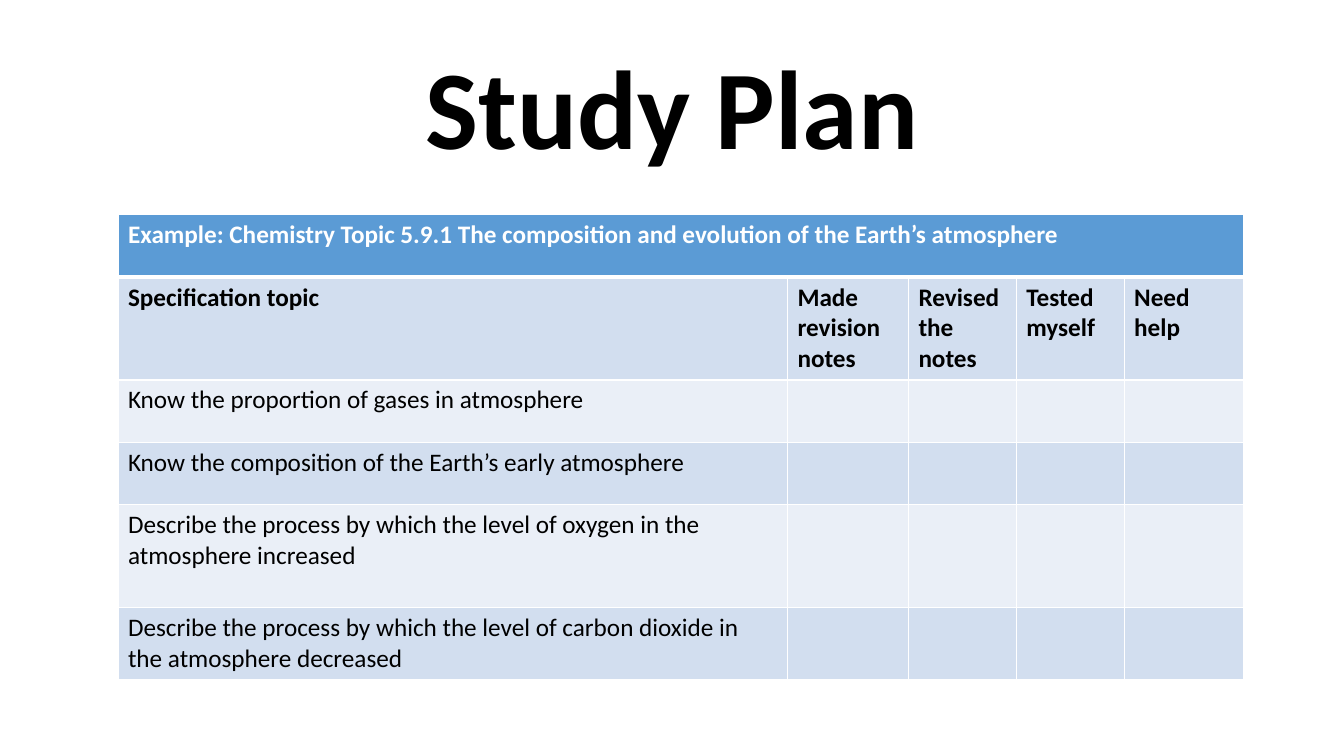
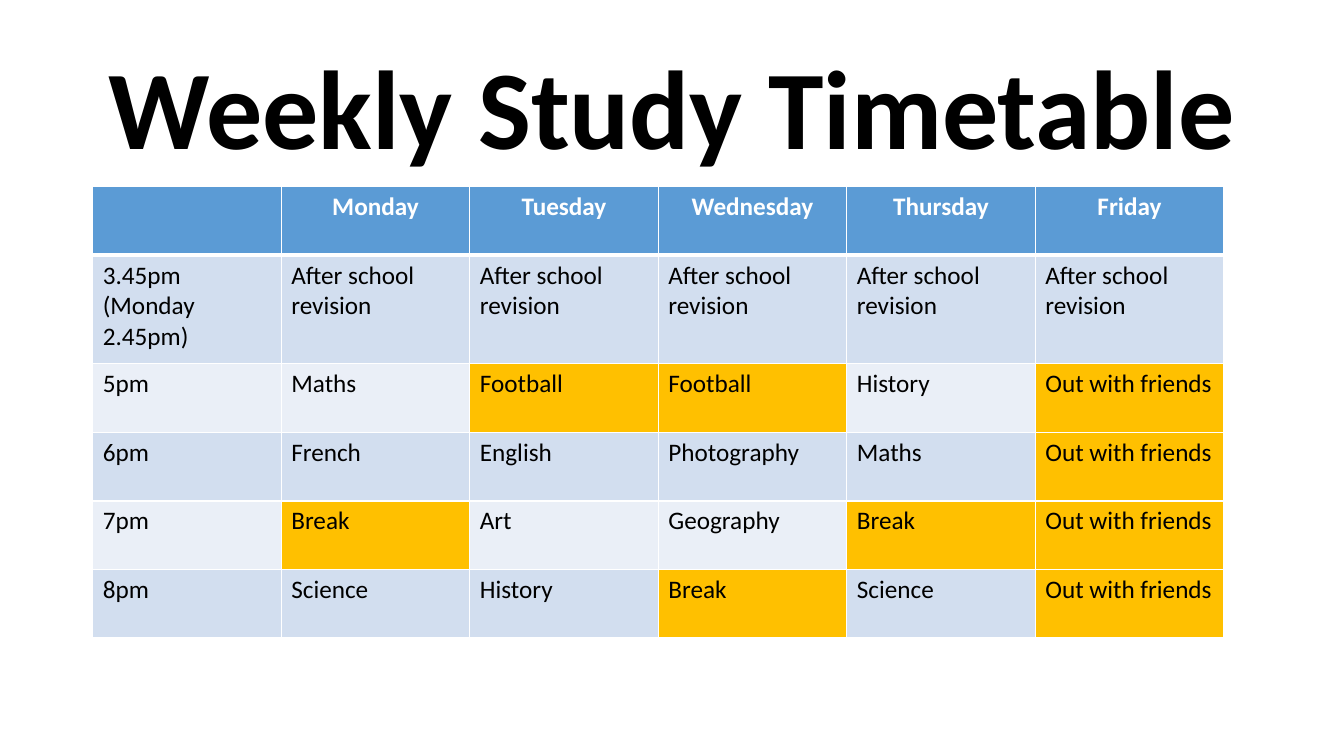
import lxml.etree
import pptx
import pptx.dml.color
import pptx.enum.text
import pptx.oxml.ns
import pptx.util

Inches = pptx.util.Inches
Pt = pptx.util.Pt
RGBColor = pptx.dml.color.RGBColor
Align = pptx.enum.text.PP_ALIGN
qn = pptx.oxml.ns.qn

BLACK = RGBColor(0x00, 0x00, 0x00)
WHITE = RGBColor(0xFF, 0xFF, 0xFF)
HEADER_BLUE = RGBColor(0x5B, 0x9B, 0xD5)
BAND_DARK = RGBColor(0xD2, 0xDE, 0xEF)
BAND_LIGHT = RGBColor(0xEA, 0xEF, 0xF7)
LEISURE_ORANGE = RGBColor(0xFF, 0xC0, 0x00)

STUDY_PLAN = [
    ["Example: Chemistry Topic 5.9.1 The composition and evolution of the Earth’s atmosphere"],
    ["Specification topic", "Made revision notes", "Revised the notes", "Tested myself", "Need help"],
    ["Know the proportion of gases in atmosphere"],
    ["Know the composition of the Earth’s early atmosphere"],
    ["Describe the process by which the level of oxygen in the atmosphere increased"],
    ["Describe the process by which the level of carbon dioxide in the atmosphere decreased"],
]
TIMETABLE = [
    ["", "Monday", "Tuesday", "Wednesday", "Thursday", "Friday"],
    ["3.45pm\n(Monday 2.45pm)"] + ["After school revision"] * 5,
    ["5pm", "Maths", "Football", "Football", "History", "Out with friends"],
    ["6pm", "French", "English", "Photography", "Maths", "Out with friends"],
    ["7pm", "Break", "Art", "Geography", "Break", "Out with friends"],
    ["8pm", "Science", "History", "Break", "Science", "Out with friends"],
]
LEISURE = {"Football", "Break", "Out with friends"}


class StudyDeck:
    FONT = "Calibri"
    TITLE_SIZE = 80
    TABLE_SIZE = 18
    RULE = 1
    HEADER_RULE = 3

    def __init__(self):
        self.presentation = pptx.Presentation()
        self.presentation.slide_width = Inches(13.33)
        self.presentation.slide_height = Inches(7.5)
        self.slide = None

    def add_slide(self, heading):
        layout = self.presentation.slide_layouts.get_by_name("Title Only")
        self.slide = self.presentation.slides.add_slide(layout)
        title = self.slide.shapes.title
        title.left, title.top = Inches(0.92), Inches(0.4)
        title.width, title.height = Inches(11.5), Inches(1.45)
        frame = title.text_frame
        frame.word_wrap = True
        frame.auto_size = pptx.enum.text.MSO_AUTO_SIZE.NONE
        frame.vertical_anchor = pptx.enum.text.MSO_ANCHOR.MIDDLE
        frame.paragraphs[0].line_spacing = 0.9
        self.add_text(frame, heading, self.TITLE_SIZE, BLACK, True, Align.CENTER)

    def add_text(self, frame, text, size, color, bold, align):
        """Set each line of the text as a paragraph of its own."""
        for index, line in enumerate(text.split("\n")):
            paragraph = frame.add_paragraph() if index else frame.paragraphs[0]
            paragraph.alignment = align
            run = paragraph.add_run()
            run.text = line
            run.font.name = self.FONT
            run.font.size = Pt(size)
            run.font.bold = bold
            run.font.color.rgb = color

    def add_borders(self, cell, top, bottom):
        """Rule the cell in white; call before filling, as lines precede the fill."""
        properties = cell._tc.get_or_add_tcPr()
        widths = {"a:lnL": self.RULE, "a:lnR": self.RULE, "a:lnT": top, "a:lnB": bottom}
        for tag, width in widths.items():
            line = lxml.etree.SubElement(properties, qn(tag), w=str(Pt(width)))
            fill = lxml.etree.SubElement(line, qn("a:solidFill"))
            lxml.etree.SubElement(fill, qn("a:srgbClr"), val=str(WHITE))

    def add_table(self, left, top, widths, heights, rows,
                  bold_rows=1, header_align=Align.LEFT, highlights=()):
        """Add a banded table; rows shorter than the grid end in empty cells."""
        table = self.slide.shapes.add_table(
            len(heights), len(widths), Inches(left), Inches(top),
            Inches(sum(widths)), Inches(sum(heights))).table
        for column, width in zip(table.columns, widths):
            column.width = Inches(width)
        for row_index, (row, height, texts) in enumerate(zip(table.rows, heights, rows)):
            row.height = Inches(height)
            header = row_index == 0
            band = HEADER_BLUE if header else BAND_DARK if row_index % 2 else BAND_LIGHT
            padded = texts + [""] * (len(widths) - len(texts))
            for cell, text in zip(row.cells, padded):
                self.add_borders(cell,
                                 self.HEADER_RULE if row_index == 1 else self.RULE,
                                 self.HEADER_RULE if header else self.RULE)
                cell.fill.solid()
                cell.fill.fore_color.rgb = LEISURE_ORANGE if text in highlights else band
                if text:
                    self.add_text(cell.text_frame, text, self.TABLE_SIZE,
                                  WHITE if header else BLACK, row_index < bold_rows,
                                  header_align if header else Align.LEFT)
        return table


def main():
    deck = StudyDeck()

    deck.add_slide("Study Plan")
    plan = deck.add_table(1.17, 2.13, [6.64, 1.2, 1.07, 1.07, 1.19],
                          [0.62, 1.02, 0.62, 0.62, 1.02, 0.71], STUDY_PLAN, bold_rows=2)
    plan.cell(0, 0).merge(plan.cell(0, 4))

    deck.add_slide("Weekly Study Timetable")
    deck.add_table(0.92, 1.85, [1.87] * 6, [0.68, 1.08] + [0.68] * 4, TIMETABLE,
                   header_align=Align.CENTER, highlights=LEISURE)

    deck.presentation.save("out.pptx")


if __name__ == "__main__":
    main()
